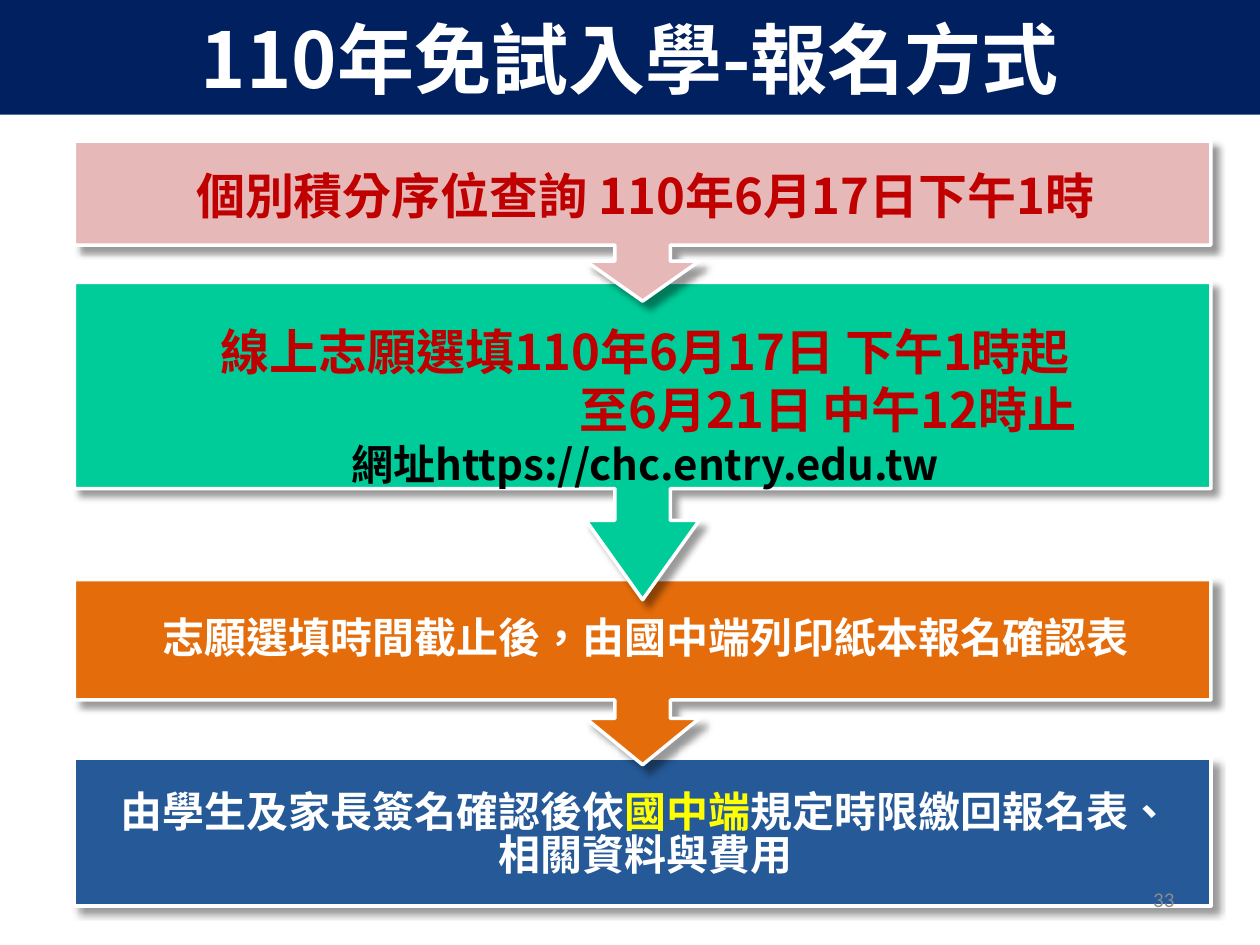
"""Builds the slide on how to register for exam-free admission in year 110."""
import pptx
import pptx.dml.color
import pptx.enum.lang
import pptx.enum.text
import pptx.oxml
import pptx.oxml.ns
import pptx.util
from pptx.util import Inches

CJK = "Noto Sans CJK SC"
RED, WHITE, BLACK, YELLOW = "C00000", "FFFFFF", "000000", "FFFF00"
CENTER = pptx.enum.text.PP_ALIGN.CENTER
TOP = pptx.enum.text.MSO_ANCHOR.TOP
MIDDLE = pptx.enum.text.MSO_ANCHOR.MIDDLE

TITLE = "110年免試入學-報名方式"
PAGE_NUMBER = "33"
LEFT, RIGHT = 0.59, 9.61
SHELF, NECK = 0.65, 0.75
SHAFT_HALF, HEAD_HALF = 0.22, 0.45

STEPS = [
    {"top": 1.12, "height": 1.27, "fill": "E6B9B8", "arrow": True, "anchor": TOP,
     "insets": (0.19, 0.76), "paragraphs": [
         {"runs": [("個別積分序位查詢 110年6月17日下午1時", 28, RED)]}]},
    {"top": 2.24, "height": 2.52, "fill": "00CC99", "arrow": True, "anchor": MIDDLE,
     "insets": (0.19, 0.76), "paragraphs": [
         {"runs": [("線上志願選填110年6月17日 下午1時起", 28, RED)]},
         {"indent": 2.94, "runs": [("至6月21日", 28, RED), (" ", 24, WHITE),
                                   ("中午12時止", 28, RED)]},
         {"runs": [("網址https://chc.entry.edu.tw", 24, BLACK)]}]},
    {"top": 4.6, "height": 1.47, "fill": "E46C0A", "arrow": True, "anchor": MIDDLE,
     "insets": (0.19, 0.76), "paragraphs": [
         {"after": 6,
          "runs": [("志願選填時間截止後，由國中端列印紙本報名確認表", 24, WHITE)]}]},
    {"top": 6.02, "height": 1.17, "fill": "255997", "arrow": False, "anchor": MIDDLE,
     "insets": (0.25, 0.19), "paragraphs": [
         {"spacing": 0.85, "runs": [("由學生及家長簽名確認後依", 24, WHITE),
                                    ("國中端", 24, YELLOW),
                                    ("規定時限繳回報名表、相關資料與費用", 24, WHITE)]}]},
]

SHADOW = (
    f'<a:effectLst {pptx.oxml.ns.nsdecls("a")}>'
    '<a:outerShdw blurRad="50800" dist="63500" dir="2700000" rotWithShape="0">'
    '<a:srgbClr val="000000"><a:alpha val="40000"/></a:srgbClr>'
    '</a:outerShdw></a:effectLst>'
)


def paint(color_format, value):
    color_format.rgb = pptx.dml.color.RGBColor.from_string(value)


def fill_shape(shape, color):
    shape.fill.solid()
    paint(shape.fill.fore_color, color)


def add_run(paragraph, text, size, color, font=CJK, bold=True):
    run = paragraph.add_run()
    run.text = text
    run.font.name = font
    run.font.size = pptx.util.Pt(size)
    run.font.bold = bold
    run.font.language_id = pptx.enum.lang.MSO_LANGUAGE_ID.TRADITIONAL_CHINESE
    paint(run.font.color, color)
    east_asian = pptx.oxml.parse_xml(
        f'<a:ea {pptx.oxml.ns.nsdecls("a")} typeface="{font}"/>')
    run.font._element.find(pptx.oxml.ns.qn("a:latin")).addnext(east_asian)


def outline(step):
    top, height = step["top"], step["height"]
    bottom = top + height
    if not step["arrow"]:
        return [(LEFT, top), (RIGHT, top), (RIGHT, bottom), (LEFT, bottom)]
    shelf, neck = top + SHELF * height, top + NECK * height
    center = (LEFT + RIGHT) / 2
    right_half = [(RIGHT, top), (RIGHT, shelf), (center + SHAFT_HALF, shelf),
                  (center + SHAFT_HALF, neck), (center + HEAD_HALF, neck)]
    left_half = [(2 * center - x, y) for x, y in reversed(right_half)]
    return right_half + [(center, bottom)] + left_half


def add_step(slide, step):
    points = [(Inches(x), Inches(y)) for x, y in outline(step)]
    builder = slide.shapes.build_freeform(*points[0])
    builder.add_line_segments(points[1:], close=True)
    shape = builder.convert_to_shape()
    fill_shape(shape, step["fill"])
    paint(shape.line.color, WHITE)
    shape.line.width = pptx.util.Pt(2)
    shape._element.spPr.append(pptx.oxml.parse_xml(SHADOW))

    frame = shape.text_frame
    frame.word_wrap = True
    frame.vertical_anchor = step["anchor"]
    frame.margin_left = frame.margin_right = Inches(0.19)
    frame.margin_top, frame.margin_bottom = map(Inches, step["insets"])
    for index, content in enumerate(step["paragraphs"]):
        paragraph = frame.add_paragraph() if index else frame.paragraphs[0]
        paragraph.alignment = CENTER
        paragraph.line_spacing = content.get("spacing", 1.0)
        paragraph.space_after = pptx.util.Pt(content.get("after", 0))
        properties = paragraph._p.get_or_add_pPr()
        properties.set("marL", str(Inches(content.get("indent", 0.04))))
        for run in content["runs"]:
            add_run(paragraph, *run)


def add_title(slide):
    title = slide.shapes.title
    title.left, title.top = Inches(0), Inches(0)
    title.width, title.height = Inches(10), Inches(0.91)
    fill_shape(title, "002060")
    title.text_frame.vertical_anchor = MIDDLE
    title.text_frame.auto_size = pptx.enum.text.MSO_AUTO_SIZE.NONE
    paragraph = title.text_frame.paragraphs[0]
    paragraph.alignment = CENTER
    add_run(paragraph, TITLE, 44, WHITE)


def add_page_number(slide):
    box = slide.shapes.add_textbox(Inches(7.09), Inches(6.94), Inches(2.33), Inches(0.4))
    box.text_frame.word_wrap = True
    box.text_frame.vertical_anchor = MIDDLE
    paragraph = box.text_frame.paragraphs[0]
    paragraph.alignment = pptx.enum.text.PP_ALIGN.RIGHT
    add_run(paragraph, PAGE_NUMBER, 12, "8C8C8C", "Calibri", False)


def main():
    presentation = pptx.Presentation()
    presentation.slide_width, presentation.slide_height = Inches(10), Inches(7.5)
    slide = presentation.slides.add_slide(presentation.slide_layouts[5])
    add_title(slide)
    for step in reversed(STEPS):
        add_step(slide, step)
    add_page_number(slide)
    presentation.save("out.pptx")


if __name__ == "__main__":
    main()
